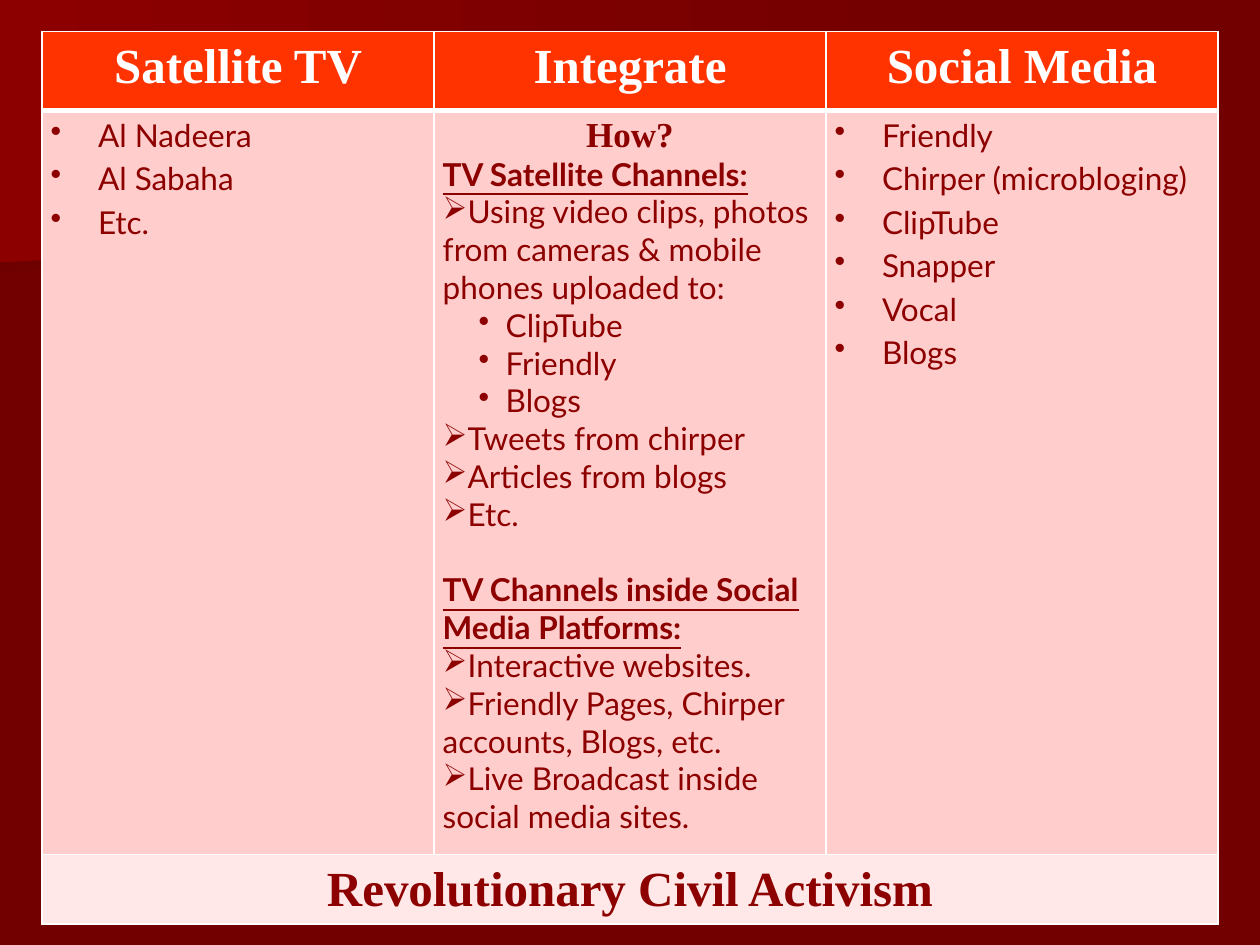
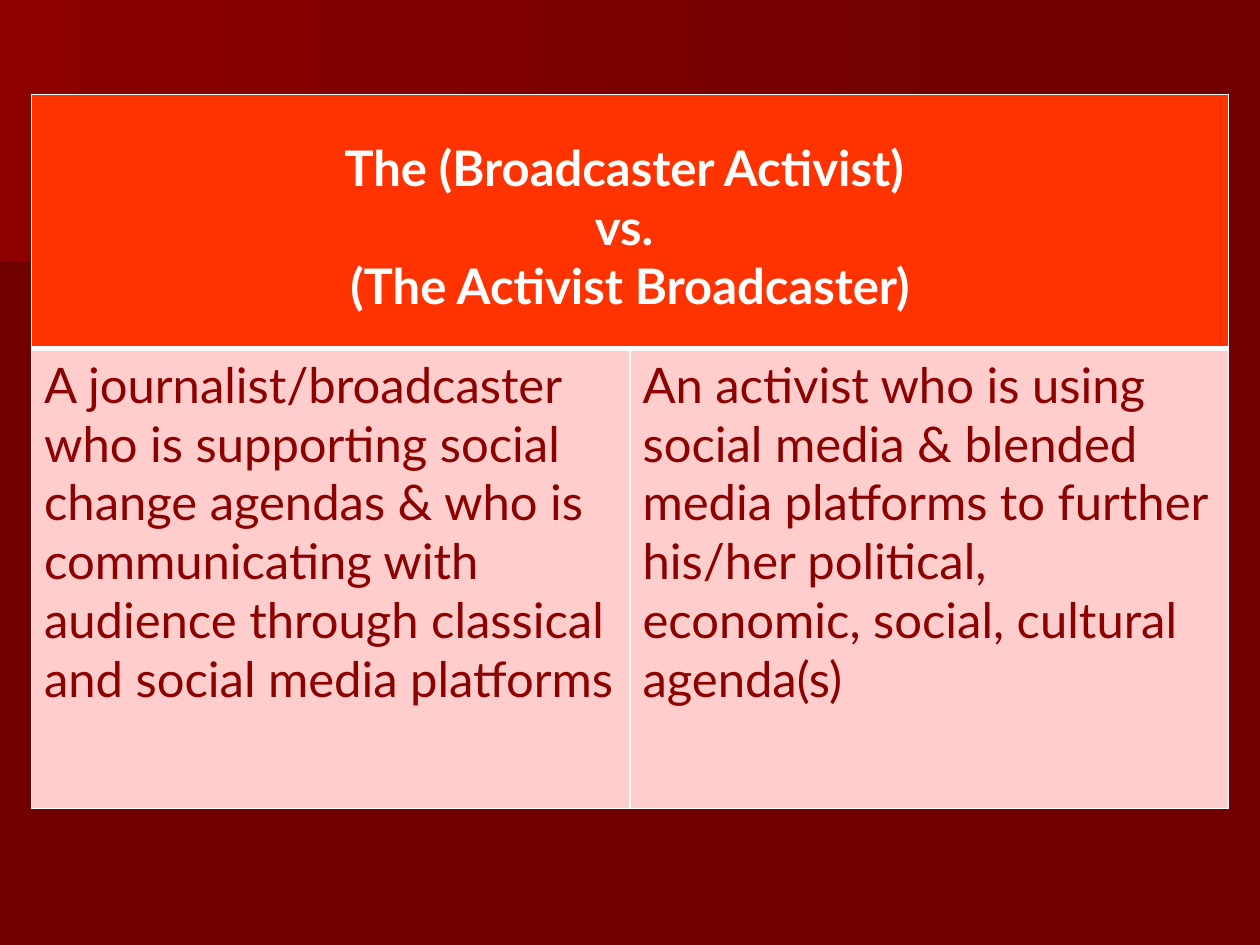
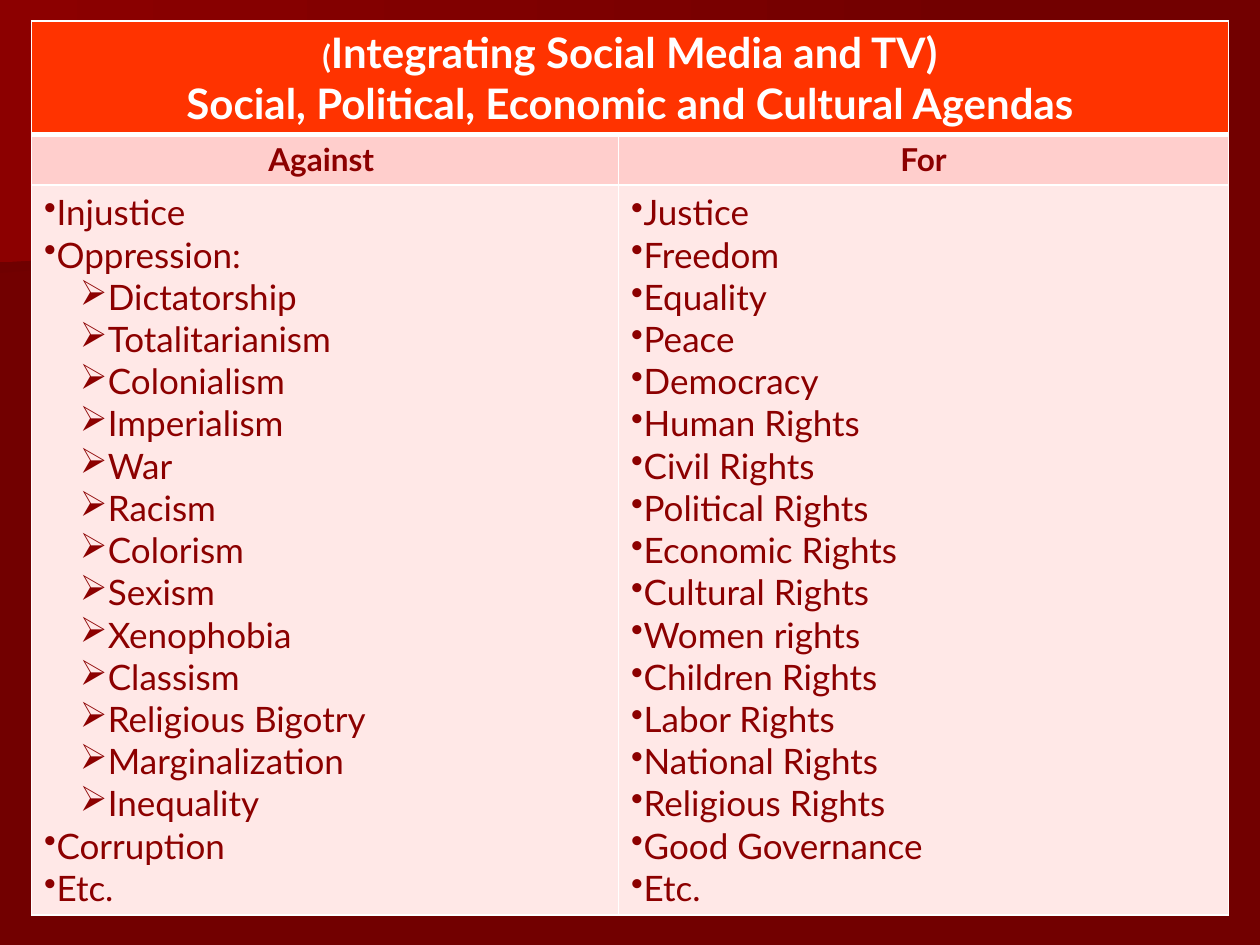
from lxml.etree import SubElement
from pptx import Presentation
from pptx.dml.color import RGBColor
from pptx.enum.text import PP_ALIGN
from pptx.oxml.ns import qn
from pptx.util import Pt

MAROON = RGBColor(0x72, 0x00, 0x00)
DEEP_MAROON = RGBColor(0x6F, 0x00, 0x00)
DARK_RED = RGBColor(0x8C, 0x00, 0x00)
ORANGE_RED = RGBColor(0xFF, 0x33, 0x00)
PINK = RGBColor(0xFF, 0xCE, 0xCC)
PALE_PINK = RGBColor(0xFF, 0xE8, 0xE7)
WHITE = RGBColor(0xFF, 0xFF, 0xFF)
SANS = "Lato"
SERIF = "Times New Roman"
BANDS = [
    (DEEP_MAROON, [(560.2, 110.2), (0, 156.2), (0, 72.7), (560.9, 72.7)]),
    (DARK_RED, [(570, 116.6), (0, 149.8), (0, 0), (570, 0)]),
]
HEADING = {"bold": True, "align": PP_ALIGN.CENTER}
LOOSE = {"spacing": 1.15}
NESTED = {"level": 1, "left": 36, "indent": -15.5}


def add_grid(left, top, widths, heights, row_fills):
    slide = prs.slides.add_slide(prs.slide_layouts[6])
    for start_color, corners in BANDS:
        outline = slide.shapes.build_freeform(*corners[0], scale=Pt(1))
        outline.add_line_segments(corners[1:], close=True)
        band = outline.convert_to_shape()
        band.shadow.inherit = False
        band.line.fill.background()
        band.fill.gradient()
        band.fill.gradient_angle = 0
        for stop, color in zip(band.fill.gradient_stops, (start_color, MAROON)):
            stop.color.rgb = color

    grid = slide.shapes.add_table(len(heights), len(widths), Pt(left), Pt(top),
                                  Pt(sum(widths)), Pt(sum(heights))).table
    grid.horz_banding = False
    for column, width in zip(grid.columns, widths):
        column.width = Pt(width)
    for r, (row, height, color) in enumerate(zip(grid.rows, heights, row_fills)):
        row.height = Pt(height)
        for cell in row.cells:
            properties = cell._tc.get_or_add_tcPr()
            for side in ("L", "R", "T", "B"):
                thick = (r, side) in ((0, "B"), (1, "T"))
                border = SubElement(properties, qn(f"a:ln{side}"), w=str(Pt(3 if thick else 1)))
                SubElement(SubElement(border, qn("a:solidFill")), qn("a:srgbClr"), val=str(WHITE))
            cell.fill.solid()
            cell.fill.fore_color.rgb = color
    return grid


def add_lines(cell, lines, size, color=DARK_RED, font=SANS, bold=False, underline=False,
              align=PP_ALIGN.LEFT, spacing=1.0, before=0, bullet=None, level=0, left=0, indent=0):
    frame = cell.text_frame
    for line in lines:
        paragraph = frame.add_paragraph() if frame.text else frame.paragraphs[0]
        paragraph.text = line
        paragraph.alignment = align
        paragraph.line_spacing = spacing
        paragraph.space_before = Pt(before)
        paragraph.level = level
        properties = paragraph._p.get_or_add_pPr()
        properties.set("marL", str(Pt(left)))
        properties.set("indent", str(Pt(indent)))
        if bullet:
            SubElement(properties, qn("a:buChar"), char=bullet)
        paragraph.font.size = Pt(size)
        paragraph.font.name = font
        paragraph.font.bold = bold
        paragraph.font.underline = underline
        paragraph.font.color.rgb = color


prs = Presentation()
prs.slide_width = Pt(720)
prs.slide_height = Pt(540)
backdrop = prs.slide_master.background.fill
backdrop.solid()
backdrop.fore_color.rgb = MAROON

media = add_grid(24, 18, [224] * 3, [45.1, 425.3, 39.6], [ORANGE_RED, PINK, PALE_PINK])
for cell in media.iter_cells():
    cell.margin_left = cell.margin_right = Pt(5)
    cell.margin_top = cell.margin_bottom = 0
for c, title in enumerate(["Satellite TV", "Integrate", "Social Media"]):
    add_lines(media.cell(0, c), [title], 28, WHITE, SERIF, **HEADING, **LOOSE)
channels = ["Al Nadeera", "Al Sabaha", "Etc."]
platforms = ["Friendly", "Chirper (microbloging)", "ClipTube", "Snapper", "Vocal", "Blogs"]
for c, names in [(0, channels), (2, platforms)]:
    add_lines(media.cell(1, c), names, 18, bullet="•", left=27, indent=-27, **LOOSE)
integration = media.cell(1, 1)
add_lines(integration, ["How?"], 20, font=SERIF, **HEADING, **LOOSE)
add_lines(integration, ["TV Satellite Channels:"], 18, bold=True, underline=True)
add_lines(integration, ["Using video clips, photos from cameras & mobile phones uploaded to:"],
          18, bullet="➢")
add_lines(integration, ["ClipTube", "Friendly", "Blogs"], 18, bullet="•", **NESTED)
add_lines(integration, ["Tweets from chirper", "Articles from blogs", "Etc."], 18, bullet="➢")
add_lines(integration, ["TV Channels inside Social Media Platforms:"], 18,
          bold=True, underline=True, before=21.6)
add_lines(integration, ["Interactive websites.", "Friendly Pages, Chirper accounts, Blogs, etc.",
                        "Live Broadcast inside social media sites."], 18, bullet="➢")
media.cell(2, 0).merge(media.cell(2, 2))
add_lines(media.cell(2, 0), ["Revolutionary Civil Activism"], 28, font=SERIF, **HEADING, **LOOSE)

roles = add_grid(18, 54, [342] * 2, [145.2, 262.8], [ORANGE_RED, PINK])
roles.cell(0, 0).merge(roles.cell(0, 1))
roles.cell(0, 0).margin_top = Pt(25.2)
add_lines(roles.cell(0, 0), ["The (Broadcaster Activist) ", "vs. ", "(The Activist Broadcaster)"],
          28, WHITE, **HEADING)
definitions = [
    "A journalist/broadcaster who is supporting social change agendas & who is "
    "communicating with audience through classical and social media platforms",
    "An activist who is using social media & blended media platforms to further "
    "his/her political, economic, social, cultural agenda(s)",
]
for c, definition in enumerate(definitions):
    add_lines(roles.cell(1, c), [definition], 28)

agendas = add_grid(18, 12, [335.5, 348.5], [52.6, 28.8, 416.2], [ORANGE_RED, PINK, PALE_PINK])
agendas.cell(0, 0).merge(agendas.cell(0, 1))
agenda_title = agendas.cell(0, 0)
add_lines(agenda_title, ["(", "Social, Political, Economic and Cultural Agendas"],
          24, WHITE, **HEADING)
opening = agenda_title.text_frame.paragraphs[0]
opening.runs[0].font.size = Pt(18)
opening.add_run().text = "Integrating Social Media and TV)"
for c, side in enumerate(["Against ", "For"]):
    add_lines(agendas.cell(1, c), [side], 18, **HEADING)
against, favoured = agendas.cell(2, 0), agendas.cell(2, 1)
add_lines(against, ["Injustice", "Oppression:"], 20, bullet="•")
add_lines(against, ["Dictatorship", "Totalitarianism", "Colonialism", "Imperialism", "War",
                    "Racism", "Colorism", "Sexism", "Xenophobia", "Classism",
                    "Religious Bigotry", "Marginalization", "Inequality"],
          20, bullet="➢", **NESTED)
add_lines(against, ["Corruption", "Etc."], 20, bullet="•")
add_lines(favoured, ["Justice", "Freedom", "Equality", "Peace", "Democracy", "Human Rights",
                     "Civil Rights", "Political Rights", "Economic Rights", "Cultural Rights",
                     "Women rights", "Children Rights", "Labor Rights", "National Rights",
                     "Religious Rights", "Good Governance", "Etc."], 20, bullet="•")

prs.save("out.pptx")
